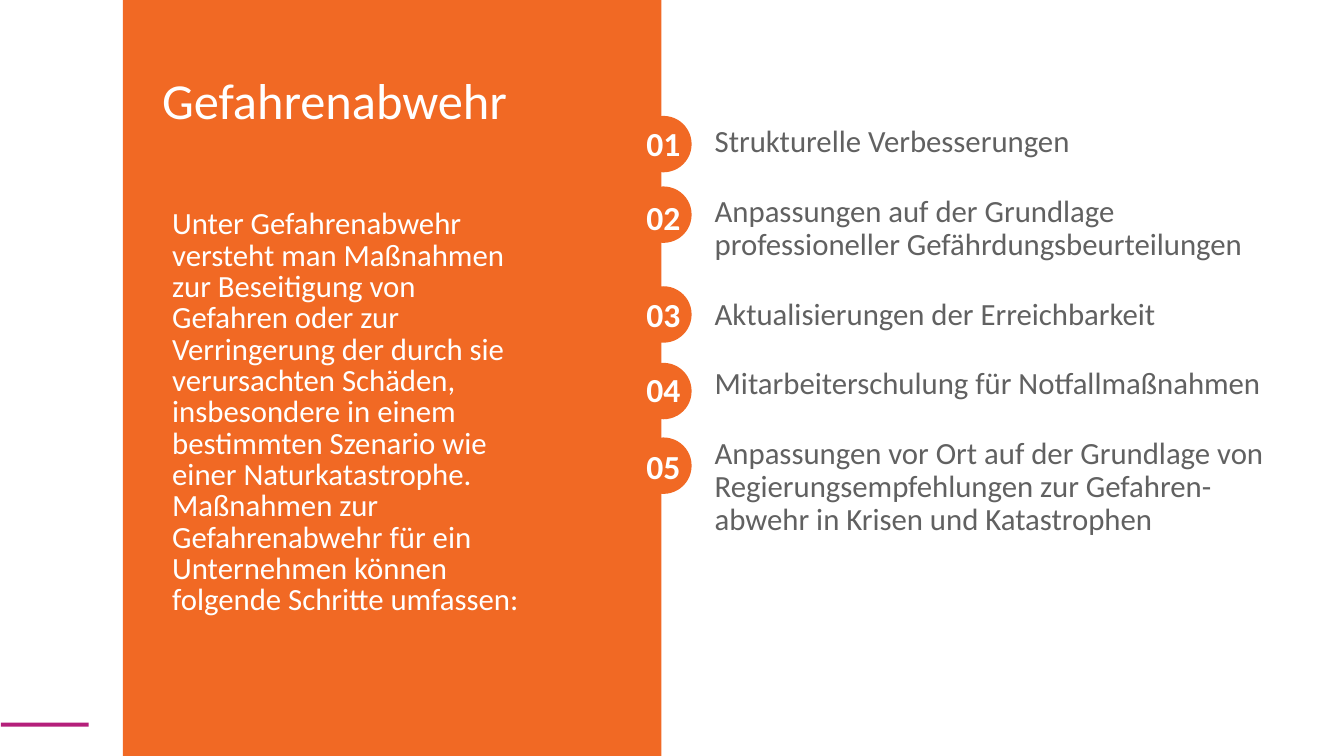
from dataclasses import dataclass

from pptx import Presentation
from pptx.dml.color import RGBColor
from pptx.enum.shapes import MSO_SHAPE
from pptx.enum.text import PP_ALIGN
from pptx.util import Inches, Pt

RECTANGLE = MSO_SHAPE.RECTANGLE
OVAL = MSO_SHAPE.OVAL
LEFT = PP_ALIGN.LEFT
CENTER = PP_ALIGN.CENTER
BLANK_LAYOUT = 6


@dataclass(frozen=True)
class Theme:
    font: str = "Calibri"
    orange: str = "F16924"
    magenta: str = "B41F7A"
    white: str = "FFFFFF"
    gray: str = "616161"
    title_size: int = 36
    number_size: int = 24
    body_size: int = 22


TITLE = "Gefahrenabwehr"
INTRODUCTION = (
    "Unter Gefahrenabwehr versteht man Maßnahmen zur Beseitigung von Gefahren "
    "oder zur Verringerung der durch sie verursachten Schäden, insbesondere in "
    "einem bestimmten Szenario wie einer Naturkatastrophe. Maßnahmen zur "
    "Gefahrenabwehr für ein Unternehmen können folgende Schritte umfassen:"
)
STEPS = [
    "Strukturelle Verbesserungen",
    "Anpassungen auf der Grundlage professioneller Gefährdungsbeurteilungen",
    "Aktualisierungen der Erreichbarkeit",
    "Mitarbeiterschulung für Notfallmaßnahmen",
    "Anpassungen vor Ort auf der Grundlage von Regierungsempfehlungen zur "
    "Gefahren-abwehr in Krisen und Katastrophen",
]
BADGE_LEFT = 6.3
BADGE_SIZE = 0.56
NUMBER_HEIGHT = 0.36
BADGE_TOPS = [(1.15, 1.17), (1.85, 1.9), (2.84, 2.87), (3.6, 3.61), (4.34, 4.37)]


class SlideBuilder:
    def __init__(self, slide, theme):
        self.slide = slide
        self.theme = theme

    def block(self, kind, left, top, width, height, color):
        shape = self.slide.shapes.add_shape(
            kind, Inches(left), Inches(top), Inches(width), Inches(height)
        )
        shape.shadow.inherit = False
        shape.fill.solid()
        shape.fill.fore_color.rgb = RGBColor.from_string(color)
        shape.line.fill.background()

    def text(self, paragraphs, left, top, width, height, *, size, color,
             bold=False, align=LEFT, line_spacing=1.0, space_before=0):
        shape = self.slide.shapes.add_textbox(
            Inches(left), Inches(top), Inches(width), Inches(height)
        )
        frame = shape.text_frame
        frame.word_wrap = True
        for index, content in enumerate(paragraphs):
            paragraph = frame.add_paragraph() if index else frame.paragraphs[0]
            paragraph.alignment = align
            paragraph.line_spacing = line_spacing
            paragraph.space_before = Pt(space_before if index else 0)
            run = paragraph.add_run()
            run.text = content
            run.font.name = self.theme.font
            run.font.size = Pt(size)
            run.font.bold = bold
            run.font.color.rgb = RGBColor.from_string(color)

    def badge(self, number, top, number_top):
        self.block(OVAL, BADGE_LEFT, top, BADGE_SIZE, BADGE_SIZE, self.theme.orange)
        self.text([f"{number:02}"], BADGE_LEFT, number_top, BADGE_SIZE, NUMBER_HEIGHT,
                  size=self.theme.number_size, color=self.theme.white,
                  bold=True, align=CENTER)


def main():
    theme = Theme()
    presentation = Presentation()
    presentation.slide_width = Inches(13.33)
    presentation.slide_height = Inches(7.5)
    slide = presentation.slides.add_slide(presentation.slide_layouts[BLANK_LAYOUT])
    builder = SlideBuilder(slide, theme)

    builder.block(RECTANGLE, 1.22, 0, 6.27, 7.5, theme.orange)
    builder.block(RECTANGLE, 0.01, 7.17, 0.87, 0.04, theme.magenta)
    builder.block(RECTANGLE, 6.56, 0, 1.37, 7.5, theme.white)

    builder.text([INTRODUCTION], 1.61, 2.03, 3.66, 4.9,
                 size=theme.body_size, color=theme.white, line_spacing=Pt(22.4))
    builder.text([TITLE], 1.51, 0.75, 5.39, 0.64,
                 size=theme.title_size, color=theme.white, line_spacing=0.8)
    builder.text(STEPS, 6.99, 1.2, 5.85, 5.61,
                 size=theme.body_size, color=theme.gray,
                 line_spacing=0.9, space_before=26)

    for number, (top, number_top) in enumerate(BADGE_TOPS, start=1):
        builder.badge(number, top, number_top)

    presentation.save("out.pptx")


if __name__ == "__main__":
    main()
